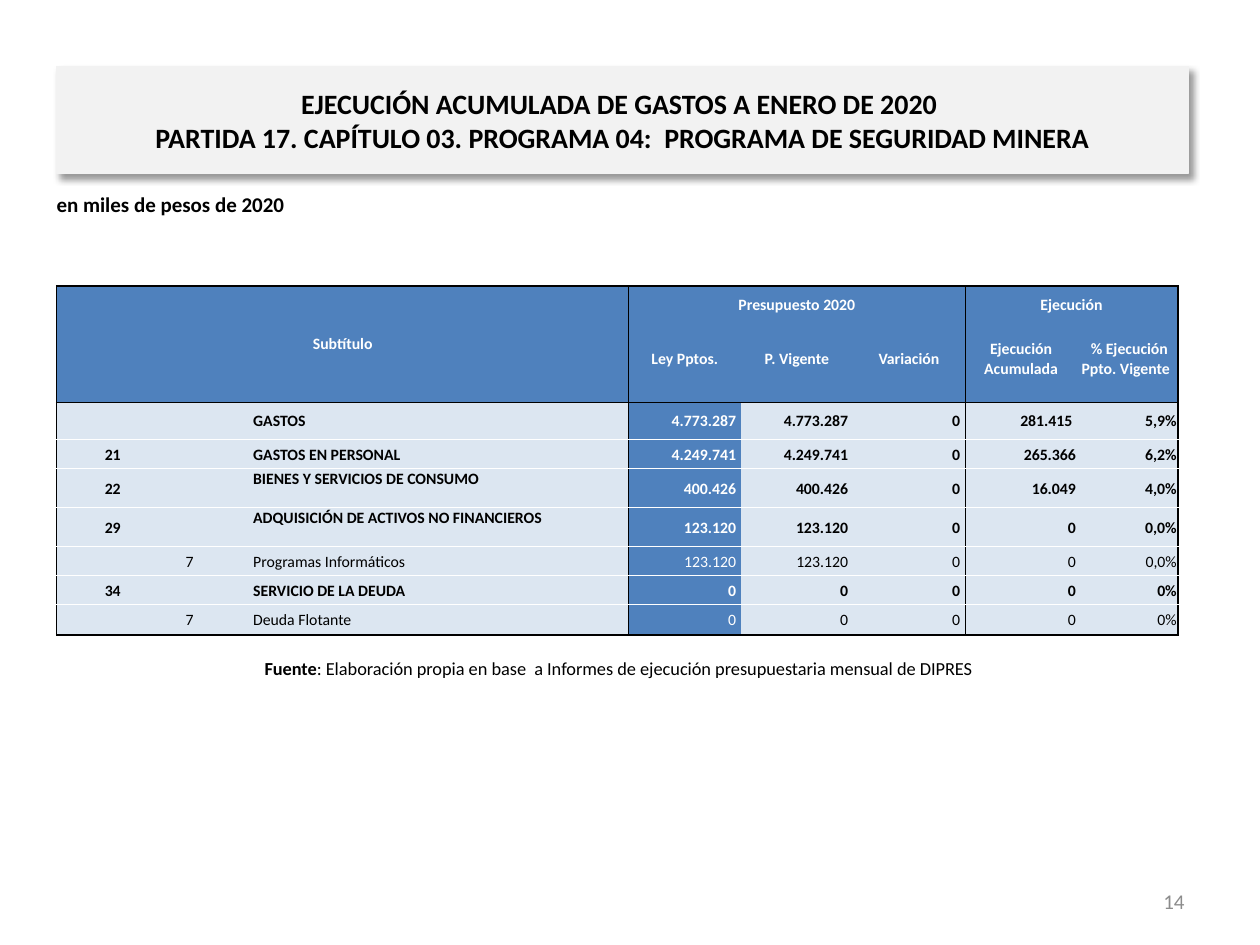
from lxml import etree
from pptx import Presentation
from pptx.dml.color import RGBColor
from pptx.enum.shapes import MSO_SHAPE
from pptx.enum.text import MSO_ANCHOR, PP_ALIGN
from pptx.oxml import parse_xml
from pptx.oxml.ns import qn
from pptx.util import Inches, Pt

RECT = MSO_SHAPE.RECTANGLE
TOP, MID, LOW = MSO_ANCHOR.TOP, MSO_ANCHOR.MIDDLE, MSO_ANCHOR.BOTTOM
LEFT, CENTER, RIGHT, JUST = (PP_ALIGN.LEFT, PP_ALIGN.CENTER,
                             PP_ALIGN.RIGHT, PP_ALIGN.JUSTIFY)
NS = "http://schemas.openxmlformats.org/drawingml/2006/main"

# Content
TITLE = ["EJECUCIÓN ACUMULADA DE GASTOS A ENERO DE 2020 ",
         "PARTIDA 17. CAPÍTULO 03. PROGRAMA 04:  PROGRAMA DE SEGURIDAD MINERA"]
UNIT = "en miles de pesos de 2020"
SOURCE = [("Fuente", True),
          (": Elaboración propia en base  a Informes de ejecución "
           "presupuestaria mensual de DIPRES", False)]
PAGE = "14"
# Header: row, column, rows spanned, columns spanned, text, anchor
HEADS = [(0, 0, 2, 4, "Subtítulo", MID),
         (0, 4, 1, 3, "Presupuesto 2020", LOW),
         (0, 7, 1, 2, "Ejecución", LOW),
         (1, 4, 1, 1, "Ley Pptos.", MID),
         (1, 5, 1, 1, "P. Vigente", MID),
         (1, 6, 1, 1, "Variación", MID),
         (1, 7, 1, 1, "Ejecución Acumulada", MID),
         (1, 8, 1, 1, " % Ejecución Ppto. Vigente ", MID)]
# Subtitle, item, label, law, current, change, spent, share
ROWS = [
    ("", "", "GASTOS", "4.773.287 ", "4.773.287 ", "0 ", "281.415 ", "5,9%"),
    ("21", "", "GASTOS EN PERSONAL", "4.249.741 ", "4.249.741 ", "0 ", "265.366", "6,2%"),
    ("22", "", "BIENES Y SERVICIOS DE CONSUMO", "400.426 ", "400.426 ", "0 ", "16.049", "4,0%"),
    ("29", "", "ADQUISICIÓN DE ACTIVOS NO FINANCIEROS", "123.120 ", "123.120 ", "0 ", "0", "0,0%"),
    ("", "7", "Programas Informáticos", "123.120 ", "123.120 ", "0 ", "0", "0,0%"),
    ("34", "", "SERVICIO DE LA DEUDA", "0 ", "0 ", "0 ", "0", "0%"),
    ("", "7", "Deuda Flotante", "0 ", "0 ", "0 ", "0", "0%"),
]
WIDTHS = [0.89, 0.33, 0.33, 2.99, 0.89, 0.89, 0.89, 0.89, 0.8]
HEIGHTS = [0.23, 0.69, 0.3, 0.23, 0.31, 0.31, 0.23, 0.23, 0.24]
RAISED = ("22", "29")  # taller rows whose label sits at the top

THEME = {"font": "Calibri", "ink": "000000", "white": "FFFFFF",
         "blue": "4F81BD", "pale": "DCE6F1", "band": "F2F2F2",
         "mute": "8C8C8C", "title": 16, "unit": 12, "note": 10.5, "cell": 9}

# Rules by grid line: colour and width
THICK, THIN, FAINT = ("ink", 1), ("ink", 0.5), ("white", 0.5)
LAST, EDGE = len(HEIGHTS), len(WIDTHS)
ACROSS = {n: FAINT for n in range(3, LAST)}
ACROSS.update({0: THICK, 2: THIN, LAST: THICK})
DOWN = {0: THICK, 4: THIN, 7: THIN, EDGE: THICK}


def tint(name):
    return RGBColor.from_string(THEME[name])


def add_run(para, text, size, color="ink", bold=False):
    run = para.add_run()
    run.text = text
    font = run.font
    font.name, font.size, font.bold = THEME["font"], Pt(THEME[size]), bold
    font.color.rgb = tint(color)


def add_text(slide, box, runs, size, color="ink", align=LEFT, anchor=TOP):
    frame = slide.shapes.add_textbox(*map(Inches, box)).text_frame
    frame.word_wrap, frame.vertical_anchor = True, anchor
    para = frame.paragraphs[0]
    para.alignment = align
    for text, bold in runs:
        add_run(para, text, size, color, bold)


def add_title(slide):
    band = slide.shapes.add_shape(RECT, *map(Inches, (0.45, 0.53, 8.98, 0.85)))
    band.fill.solid()
    band.fill.fore_color.rgb = band.line.color.rgb = tint("band")
    band.line.width = Pt(0.75)
    band._element.spPr.append(parse_xml(
        f'<a:effectLst xmlns:a="{NS}"><a:outerShdw blurRad="{Pt(4)}" '
        f'dist="{Pt(3)}" dir="2700000" algn="tl" rotWithShape="0">'
        f'<a:srgbClr val="{THEME["ink"]}"><a:alpha val="40000"/></a:srgbClr>'
        '</a:outerShdw></a:effectLst>'))
    frame = band.text_frame
    frame.word_wrap, frame.vertical_anchor = True, MID
    para = frame.paragraphs[0]
    para.alignment = CENTER
    for n, line in enumerate(TITLE):
        if n:
            para.add_line_break()
        add_run(para, line, "title", bold=True)


def set_cell(cell, text, fill, color, bold, align, anchor=MID):
    cell.fill.solid()
    cell.fill.fore_color.rgb = tint(fill)
    cell.margin_left = cell.margin_right = cell.margin_top = Inches(0.01)
    cell.margin_bottom = 0
    cell.vertical_anchor = anchor
    para = cell.text_frame.paragraphs[0]
    para.alignment = align
    if text:
        add_run(para, text, "cell", color, bold)
    else:  # keeps empty cells from growing their row
        end = etree.SubElement(para._p, qn("a:endParaRPr"))
        end.set("sz", str(THEME["cell"] * 100))


def rule_cell(cell, row, col):
    sides = [("lnL", DOWN.get(col)), ("lnR", DOWN.get(col + cell.span_width)),
             ("lnT", ACROSS.get(row)), ("lnB", ACROSS.get(row + cell.span_height))]
    props = cell._tc.get_or_add_tcPr()
    for n, (tag, rule) in enumerate(sides):
        line = etree.Element(qn("a:" + tag))
        if rule:
            line.set("w", str(Pt(rule[1])))
            fill = etree.SubElement(line, qn("a:solidFill"))
            etree.SubElement(fill, qn("a:srgbClr")).set("val", THEME[rule[0]])
        else:
            etree.SubElement(line, qn("a:noFill"))
        props.insert(n, line)


def add_budget(slide):
    box = map(Inches, (0.45, 2.27, sum(WIDTHS), sum(HEIGHTS)))
    table = slide.shapes.add_table(LAST, EDGE, *box).table
    table.first_row = table.horz_banding = False
    for col, width in zip(table.columns, WIDTHS):
        col.width = Inches(width)
    for row, height in zip(table.rows, HEIGHTS):
        row.height = Inches(height)
    # Header
    for r, c, high, wide, text, anchor in HEADS:
        cell = table.cell(r, c)
        if high * wide > 1:
            cell.merge(table.cell(r + high - 1, c + wide - 1))
        set_cell(cell, text, "blue", "white", True, CENTER, anchor)
    # Body; the third column is a blank spacer
    for r, (code, item, label, *sums) in enumerate(ROWS, 2):
        for c, text in enumerate([code, item, "", label, *sums]):
            law = c == 4
            align = CENTER if c < 3 else JUST if c == 3 else RIGHT
            anchor = TOP if c == 3 and code in RAISED else MID
            set_cell(table.cell(r, c), text, "blue" if law else "pale",
                     "white" if law else "ink", not item, align, anchor)
    # Borders
    for r in range(LAST):
        for c in range(EDGE):
            rule_cell(table.cell(r, c), r, c)


def main():
    deck = Presentation()
    deck.slide_width, deck.slide_height = Inches(10), Inches(7.5)
    slide = deck.slides.add_slide(deck.slide_layouts[6])
    add_text(slide, (0.45, 5.17, 8.92, 0.26), SOURCE, "note",
             align=CENTER, anchor=MID)
    add_text(slide, (7.17, 6.95, 2.33, 0.4), [(PAGE, False)], "unit", "mute",
             RIGHT, MID)
    add_text(slide, (0.35, 1.47, 7.49, 0.39), [(UNIT, True)], "unit")
    add_title(slide)
    add_budget(slide)
    deck.save("out.pptx")


if __name__ == "__main__":
    main()
